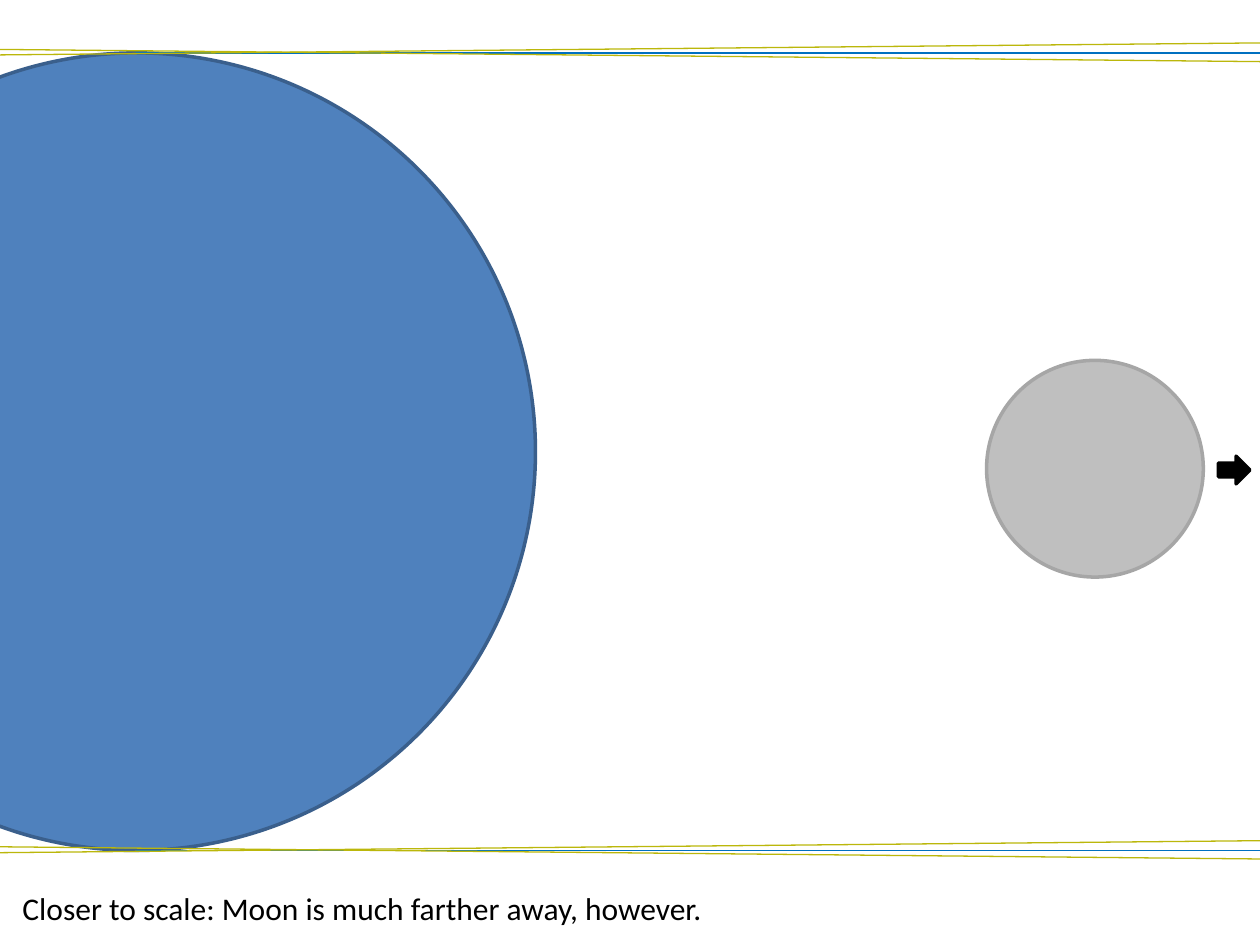
from dataclasses import dataclass

from lxml.etree import SubElement
from pptx import Presentation
from pptx.dml.color import RGBColor
from pptx.enum.shapes import MSO_CONNECTOR, MSO_SHAPE
from pptx.enum.text import MSO_AUTO_SIZE
from pptx.oxml.ns import qn
from pptx.util import Inches, Pt


@dataclass(frozen=True)
class Theme:
    earth: str = "4F81BD"
    earth_edge: str = "3A5F8C"
    moon: str = "BFBFBF"
    moon_edge: str = "A6A6A6"
    axis: str = "0070C0"
    ray: str = "BBB70B"
    ink: str = "000000"
    font: str = "Calibri"
    text_size: int = 18
    edge_width: float = 2
    ray_width: float = 0.75


theme = Theme()


def add_text(s, text, *, left, top, width, height, size, color, font):
    box = s.shapes.add_textbox(Inches(left), Inches(top), Inches(width), Inches(height))
    tf = box.text_frame
    tf.word_wrap = True
    tf.auto_size = MSO_AUTO_SIZE.SHAPE_TO_FIT_TEXT
    r = tf.paragraphs[0].add_run()
    r.text = text
    r.font.size = Pt(size)
    r.font.name = font
    r.font.color.rgb = RGBColor.from_string(color)
    return box


prs = Presentation()
prs.slide_width = Inches(10)
prs.slide_height = Inches(7.5)
s = prs.slides.add_slide(prs.slide_layouts[6])

earth_top, earth_size = 0.42, 6.33
earth_bottom = earth_top + earth_size

bodies = [
    (MSO_SHAPE.OVAL, -2.08, earth_top, earth_size, earth_size, theme.earth, theme.earth_edge),
    (MSO_SHAPE.OVAL, 7.83, 2.86, 1.72, 1.72, theme.moon, theme.moon_edge),
    (MSO_SHAPE.RIGHT_ARROW, 9.67, 3.62, 0.25, 0.22, theme.ink, theme.ink),
]
for kind, left, top, width, height, fill, edge in bodies:
    sp = s.shapes.add_shape(kind, Inches(left), Inches(top), Inches(width), Inches(height))
    sp.shadow.inherit = False
    sp.fill.solid()
    sp.fill.fore_color.rgb = RGBColor.from_string(fill)
    sp.line.color.rgb = RGBColor.from_string(edge)
    sp.line.width = Pt(theme.edge_width)

for y, axis_end, shift in [(earth_top, 11.17, 0), (earth_bottom, 11.33, 0.17)]:
    rays = [
        (1.08, y, axis_end, y, theme.axis),
        (10.08 + shift, y - 0.08, -0.42 + shift, y + 0.02, theme.ray),
        (10.08 + shift, y + 0.07, -0.25 + shift, y - 0.03, theme.ray),
    ]
    for x1, y1, x2, y2, color in rays:
        ray = s.shapes.add_connector(
            MSO_CONNECTOR.STRAIGHT, Inches(x1), Inches(y1), Inches(x2), Inches(y2)
        )
        ray.line.color.rgb = RGBColor.from_string(color)
        ray.line.width = Pt(theme.ray_width)
        SubElement(ray._element.spPr, qn("a:effectLst"))

add_text(
    s,
    "Closer to scale: Moon is much farther away, however.",
    left=0.08,
    top=7.01,
    width=6.42,
    height=0.4,
    size=theme.text_size,
    color=theme.ink,
    font=theme.font,
)

prs.save("out.pptx")
